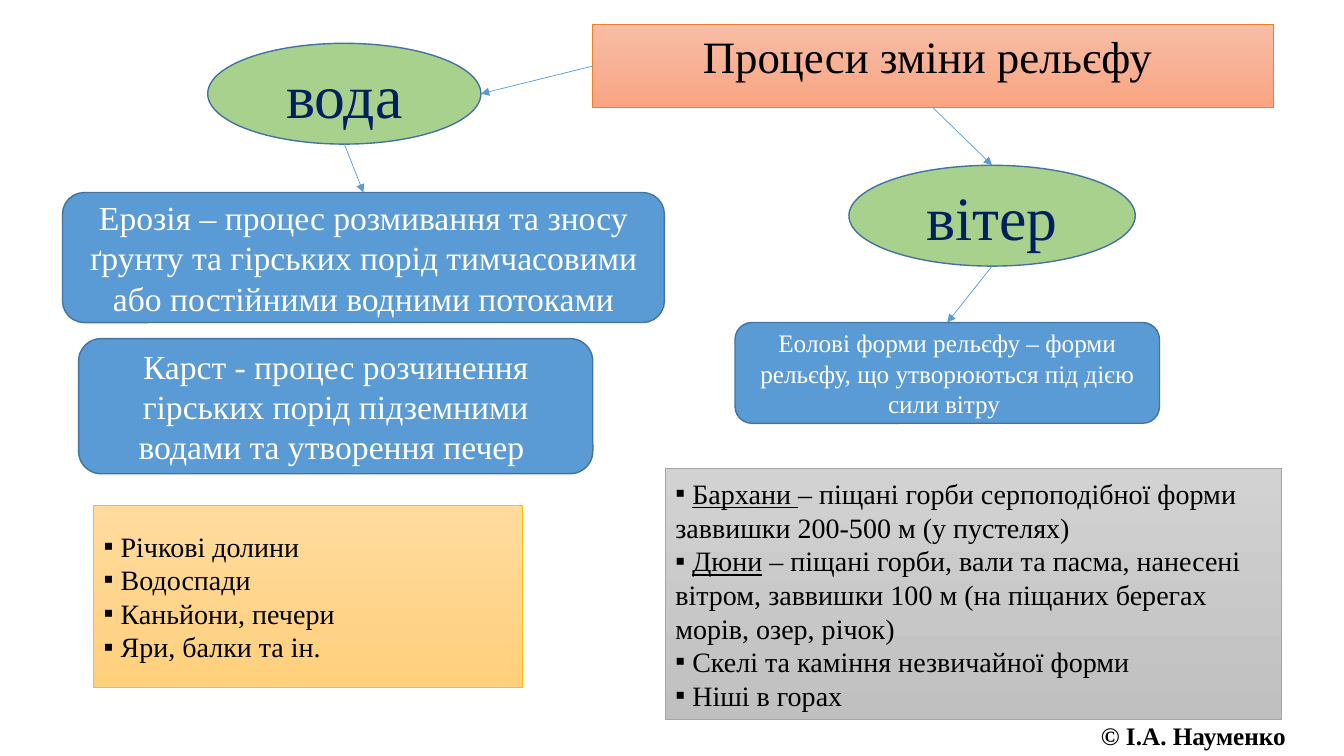
from lxml.etree import SubElement
from pptx import Presentation
from pptx.dml.color import RGBColor
from pptx.enum.shapes import MSO_CONNECTOR, MSO_SHAPE
from pptx.enum.text import MSO_ANCHOR, MSO_AUTO_SIZE, PP_ALIGN
from pptx.oxml.ns import qn
from pptx.util import Inches, Pt

FONT = "Times New Roman"
COLORS = {
    "black": "000000", "white": "FFFFFF", "navy": "002060",
    "blue": "5B9BD5", "blue_edge": "43739E", "green": "A9D18E",
    "orange_top": "F7BDA5", "orange_bottom": "F8A582", "orange_edge": "ED7D31",
    "gold_top": "FFDB9E", "gold_bottom": "FFD07C", "gold_edge": "FFC000",
    "gray_top": "D2D2D2", "gray_bottom": "C0C0C0", "gray_edge": "A5A5A5",
}
TOP, LEFT, BOTTOM, RIGHT = range(4)


def color(name):
    return RGBColor.from_string(COLORS[name])


def set_font(font, size, name):
    font.name = FONT
    font.size = Pt(size)
    font.color.rgb = color(name)


def add_box(page, kind, box, edge, edge_width, anchor=MSO_ANCHOR.MIDDLE):
    shape = page.shapes.add_shape(kind, *map(Inches, box))
    shape.shadow.inherit = False
    shape.line.color.rgb = color(edge)
    shape.line.width = Pt(edge_width)
    shape.text_frame.word_wrap = True
    shape.text_frame.vertical_anchor = anchor
    return shape


def fill_gradient(shape, hue):
    shape.fill.gradient()
    shape.fill.gradient_angle = 270
    for stop, end in zip(shape.fill.gradient_stops, ("top", "bottom")):
        stop.color.rgb = color(f"{hue}_{end}")


def write_centered(shape, text, size, name):
    para = shape.text_frame.paragraphs[0]
    para.text = text
    para.alignment = PP_ALIGN.CENTER
    set_font(para.font, size, name)


def add_title(page, box, text):
    shape = add_box(page, MSO_SHAPE.RECTANGLE, box, "orange_edge", 0.5, MSO_ANCHOR.TOP)
    fill_gradient(shape, "orange")
    write_centered(shape, text, 32, "black")
    return shape


def add_agent(page, box, text):
    shape = add_box(page, MSO_SHAPE.OVAL, box, "blue_edge", 1)
    shape.fill.solid()
    shape.fill.fore_color.rgb = color("green")
    write_centered(shape, text, 44, "navy")
    return shape


def add_definition(page, box, text, size):
    shape = add_box(page, MSO_SHAPE.ROUNDED_RECTANGLE, box, "blue_edge", 1)
    shape.fill.solid()
    shape.fill.fore_color.rgb = color("blue")
    write_centered(shape, text, size, "white")
    return shape


def add_examples(page, box, hue, items):
    """Each item is a pair: underlined term and the text after it."""
    shape = add_box(page, MSO_SHAPE.RECTANGLE, box, f"{hue}_edge", 0.5)
    fill_gradient(shape, hue)
    frame = shape.text_frame
    for index, (term, text) in enumerate(items):
        para = frame.paragraphs[0] if index == 0 else frame.add_paragraph()
        para.alignment = PP_ALIGN.LEFT
        properties = para._p.get_or_add_pPr()
        SubElement(properties, qn("a:buFont"), typeface=FONT)
        SubElement(properties, qn("a:buChar"), char="▪")
        set_font(para.font, 20, "black")
        if term:
            para.add_run().text = " "
            span = para.add_run()
            span.text = term
            span.font.underline = True
        para.add_run().text = text


def side_point(shape, side):
    across = {LEFT: 0, RIGHT: 2}.get(side, 1)
    down = {TOP: 0, BOTTOM: 2}.get(side, 1)
    return (shape.left + shape.width * across // 2,
            shape.top + shape.height * down // 2)


def add_arrow(page, start, start_side, end, end_side):
    arrow = page.shapes.add_connector(
        MSO_CONNECTOR.STRAIGHT, *side_point(start, start_side), *side_point(end, end_side))
    # Ovals number their connection sites differently, apart from the top
    if start.auto_shape_type != MSO_SHAPE.OVAL or start_side == TOP:
        arrow.begin_connect(start, start_side)
    if end.auto_shape_type != MSO_SHAPE.OVAL or end_side == TOP:
        arrow.end_connect(end, end_side)
    arrow.line.color.rgb = color("blue")
    arrow.line.width = Pt(0.5)
    SubElement(arrow.line._get_or_add_ln(), qn("a:tailEnd"), type="triangle")
    SubElement(arrow._element.spPr, qn("a:effectLst"))


def add_copyright(page, box, text):
    frame = page.shapes.add_textbox(*map(Inches, box)).text_frame
    frame.word_wrap = False
    frame.auto_size = MSO_AUTO_SIZE.SHAPE_TO_FIT_TEXT
    para = frame.paragraphs[0]
    para.text = text
    set_font(para.font, 18, "black")
    para.font.bold = True


def build_relief_page(page):
    add_copyright(page, (10.82, 7.1, 2.05, 0.4), "© І.А. Науменко")
    title = add_title(page, (5.88, 0.24, 6.75, 0.83), "Процеси зміни рельєфу ")

    # Water branch
    erosion = add_definition(
        page, (0.62, 1.91, 5.97, 1.29),
        "Ерозія – процес розмивання та зносу ґрунту та гірських порід "
        "тимчасовими або постійними водними потоками", 24)
    add_definition(
        page, (0.78, 3.36, 5.1, 1.34),
        "Карст - процес розчинення гірських порід підземними водами "
        "та утворення печер ", 24)
    add_examples(page, (0.93, 5.01, 4.25, 1.81), "gold", [
        ("", " Річкові долини"),
        ("", " Водоспади"),
        ("", " Каньйони, печери"),
        ("", " Яри, балки та ін."),
    ])
    water = add_agent(page, (2.06, 0.43, 2.71, 1), "вода")

    # Wind branch
    aeolian = add_definition(
        page, (7.29, 3.2, 4.21, 1),
        "Еолові форми рельєфу – форми рельєфу, що утворюються "
        "під дією сили вітру ", 18)
    add_examples(page, (6.6, 4.65, 6.11, 2.49), "gray", [
        ("Бархани ", "– піщані горби серпоподібної форми заввишки 200-500 м (у пустелях)"),
        ("Дюни", " – піщані горби, вали та пасма, нанесені вітром, "
                 "заввишки 100 м (на піщаних берегах морів, озер, річок)"),
        ("", " Скелі та каміння незвичайної форми"),
        ("", " Ніші в горах"),
    ])
    wind = add_agent(page, (8.42, 1.64, 2.84, 1), "вітер")

    # Arrows
    add_arrow(page, title, LEFT, water, RIGHT)
    add_arrow(page, title, BOTTOM, wind, TOP)
    add_arrow(page, water, BOTTOM, erosion, TOP)
    add_arrow(page, wind, BOTTOM, aeolian, TOP)


def main():
    deck = Presentation()
    deck.slide_width = Inches(13.33)
    deck.slide_height = Inches(7.5)
    build_relief_page(deck.slides.add_slide(deck.slide_layouts[6]))
    deck.save("out.pptx")


if __name__ == "__main__":
    main()
